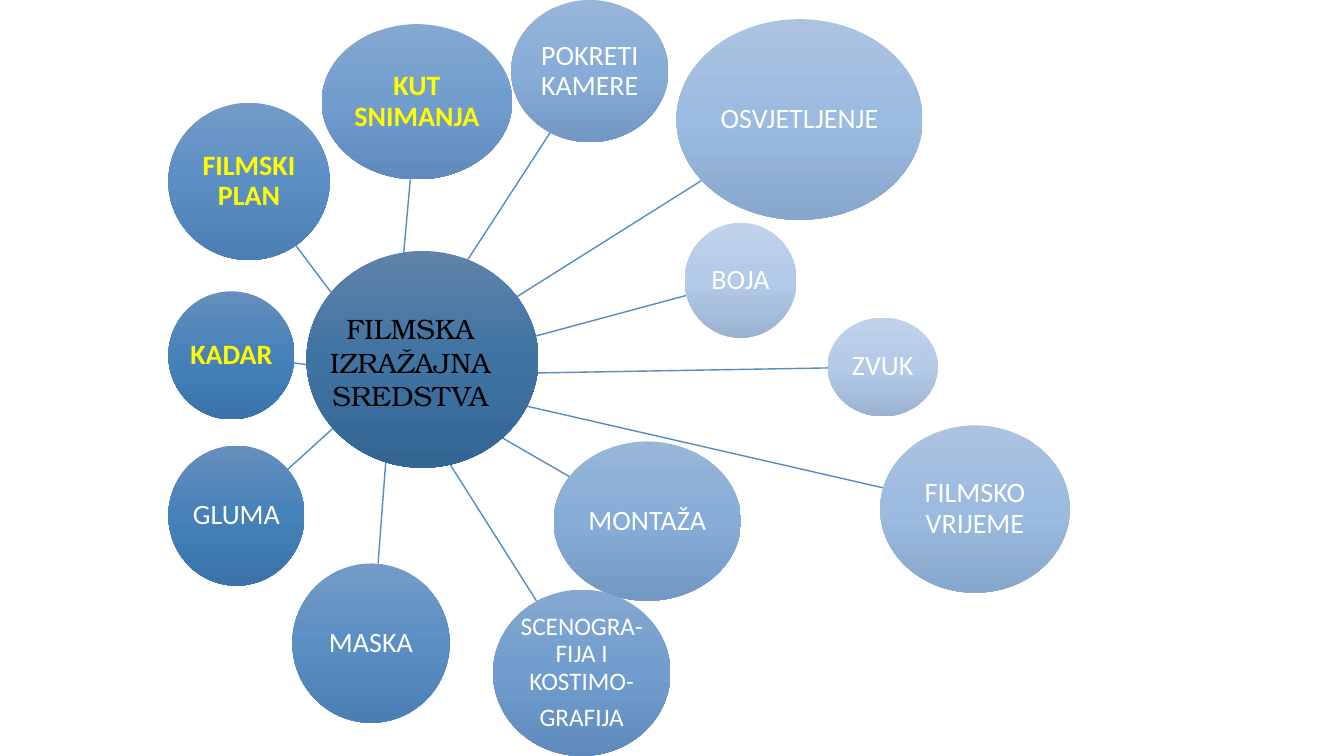
from copy import deepcopy
from lxml.etree import SubElement
from pptx import Presentation
from pptx.dml.color import RGBColor as RGB
from pptx.enum.shapes import MSO_CONNECTOR as LINE, MSO_SHAPE as SHAPE
from pptx.enum.text import MSO_ANCHOR as ANCHOR, MSO_AUTO_SIZE as FIT, PP_ALIGN as ALIGN
from pptx.oxml.ns import qn
from pptx.util import Inches, Pt

COLORS = {
    "ray": "538DC1", "studied": "FFFF00", "plain": "FFFFFF", "title": "000000",
    "hub top": "5F83AA", "hub middle": "3F73A2", "hub bottom": "346694",
    "deep top": "668FBD", "deep middle": "4681BA", "deep bottom": "3973AA",
    "strong top": "749BC7", "strong middle": "5B8FC4", "strong bottom": "4B7FB4",
    "medium top": "85A8D0", "medium middle": "709DCE", "medium bottom": "5F8BBC",
    "soft top": "98B6D9", "soft middle": "86ACD7", "soft bottom": "7298C3",
    "light top": "ABC3E1", "light middle": "9CBBE0", "light bottom": "87A6CB",
    "pale top": "C0D2EA", "pale middle": "B3CAE8", "pale bottom": "9BB3D1",
}
COLUMNS, ROWS = 1333, 750
HUB = (304, 249, 230, 215)
TOPIC = (297, 304, 220, 111)

# text, tone, cells (left, top, width, height), ray (from column, row, to column, row)
MEANS = [
    ("KADAR", "deep", (167, 289, 125, 127), (361, 369, 291, 360)),
    ("FILMSKI PLAN", "strong", (167, 102, 160, 156), (369, 344, 293, 243)),
    ("KUT SNIMANJA", "medium", (319, 24, 189, 154), (392, 344, 407, 178)),
    ("POKRETI KAMERE", "soft", (507, 0, 156, 141), (408, 344, 546, 131)),
    ("OSVJETLJENJE", "light", (671, 19, 244, 199), (418, 354, 696, 179)),
    ("BOJA", "pale", (679, 221, 111, 114), (418, 364, 681, 293)),
    ("ZVUK", "pale", (821, 315, 109, 98), (418, 372, 821, 365)),
    ("FILMSKO VRIJEME", "light", (873, 422, 188, 166), (418, 379, 876, 484)),
    ("MONTAŽA", "soft", (549, 438, 186, 158), (418, 388, 565, 473)),
    ("SCENOGRA-FIJA I KOSTIMO-\nGRAFIJA", "medium", (489, 585, 176, 165), (408, 400, 532, 596)),
    ("MASKA", "strong", (290, 559, 156, 158), (387, 400, 375, 559)),
    ("GLUMA", "deep", (167, 442, 135, 139), (361, 397, 285, 466)),
]
STUDIED = ("KADAR", "FILMSKI PLAN", "KUT SNIMANJA")

deck = Presentation()
deck.slide_width, deck.slide_height = Inches(13.33), Inches(7.5)
slide = deck.slides.add_slide(deck.slide_layouts[5])
column, row = deck.slide_width / COLUMNS, deck.slide_height / ROWS


def place(cells):
    return [round(cell * unit) for cell, unit in zip(cells, (column, row, column, row))]


def write(holder, text, size=20, font="Calibri", color="plain", bold=False,
          anchor=ANCHOR.MIDDLE, inset=0.01, spacing=0.9, after=6.3):
    frame = holder.text_frame
    frame.word_wrap = True
    frame.auto_size = FIT.NONE
    frame.vertical_anchor = anchor
    frame.margin_left = frame.margin_right = Inches(inset)
    frame.margin_top = frame.margin_bottom = Inches(inset / 2 if inset > 0.05 else inset)
    frame.text = text
    for paragraph in frame.paragraphs:
        paragraph.alignment = ALIGN.CENTER
        paragraph.line_spacing = spacing
        paragraph.space_after = Pt(after)
        for run in paragraph.runs:
            run.font.size, run.font.name, run.font.bold = Pt(size), font, bold
            run.font.color.rgb = RGB.from_string(COLORS[color])


for text, tone, cells, ends in MEANS:
    ray = slide.shapes.add_connector(LINE.STRAIGHT, *place(ends))
    ray.line.color.rgb = RGB.from_string(COLORS["ray"])
    ray.line.width = Pt(1)
    SubElement(ray._element.spPr, qn("a:effectLst"))

for text, tone, cells, ends in [("", "hub", HUB, None)] + MEANS:
    circle = slide.shapes.add_shape(SHAPE.OVAL, *place(cells))
    circle.shadow.inherit = False
    circle.line.fill.background()
    circle.fill.gradient()
    circle.fill.gradient_angle = 270
    first = circle.fill.gradient_stops[0]._gs
    first.addnext(deepcopy(first))
    for stop, part, position in zip(circle.fill.gradient_stops,
                                    ("top", "middle", "bottom"), (0, 0.5, 1)):
        stop.color.rgb = RGB.from_string(COLORS[f"{tone} {part}"])
        stop.position = position
    if text:
        studied = text in STUDIED
        write(circle, text, size=18 if "\n" in text else 20,
              color="studied" if studied else "plain", bold=studied)

topic = slide.shapes.title
topic.left, topic.top, topic.width, topic.height = place(TOPIC)
write(topic, "FILMSKA IZRAŽAJNA SREDSTVA", font="TeX Gyre Bonum", color="title",
      anchor=ANCHOR.TOP, inset=0.1, spacing=1.0, after=0)
slide.shapes._spTree.append(topic._element)

deck.save("out.pptx")
